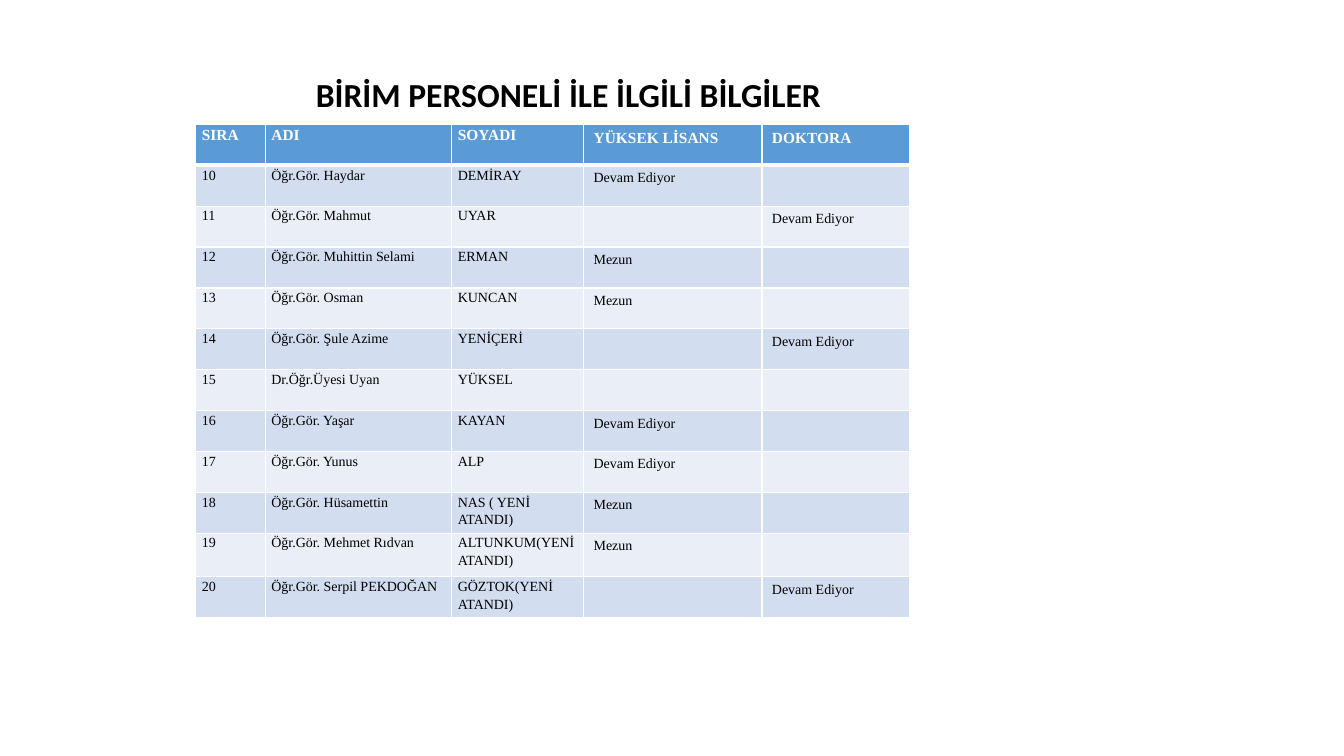
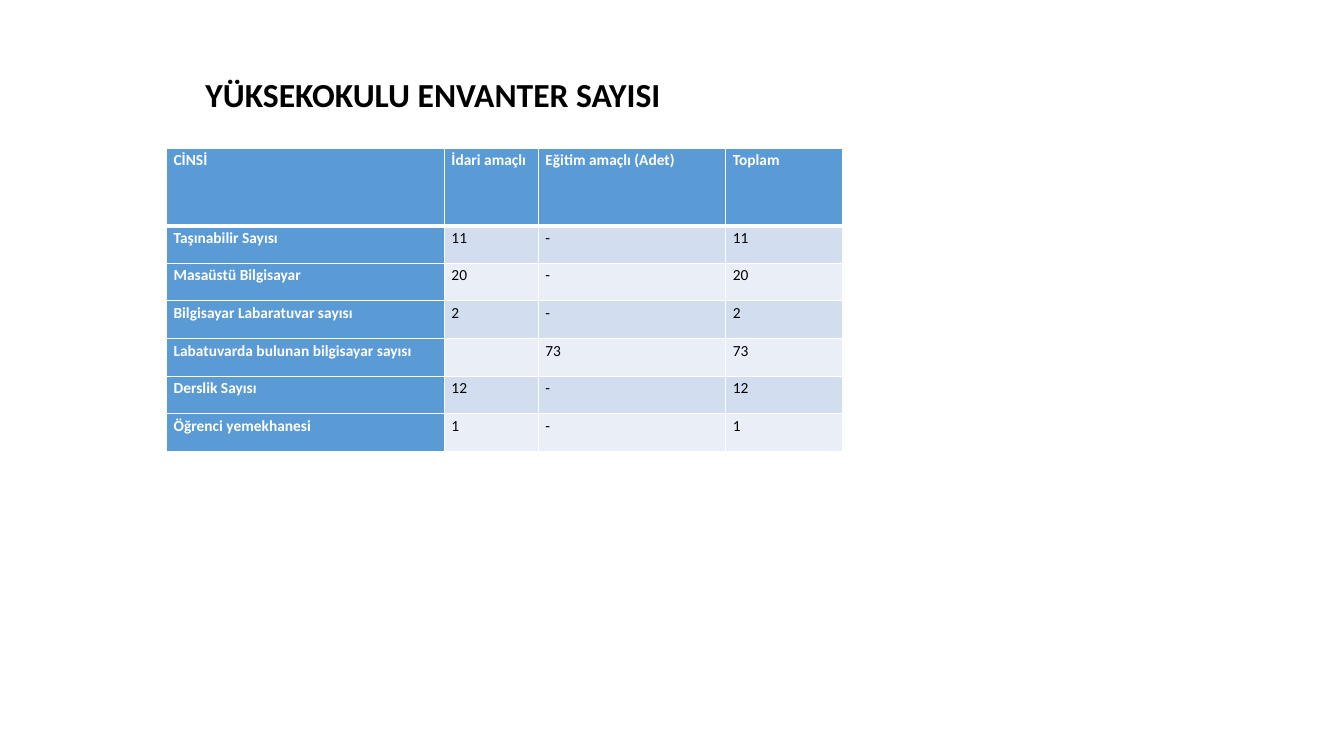
import pptx
import pptx.util
import pptx.dml.color
import pptx.enum.text
import pptx.oxml
import pptx.oxml.ns
from dataclasses import dataclass

Pt = pptx.util.Pt
RGB = pptx.dml.color.RGBColor.from_string
ALIGN = pptx.enum.text.PP_ALIGN


@dataclass(frozen=True)
class Theme:
    accent: str = "5B9BD5"
    bands: tuple = ("D2DEEF", "EAEFF7")
    white: str = "FFFFFF"
    black: str = "000000"
    sans: str = "Calibri"
    serif: str = "Times New Roman"
    title_size: float = 24
    head_size: float = 11
    rule: float = 1
    head_rule: float = 3
    spacing: float = 1.15


THEME = Theme()
ONGOING = "Devam Ediyor"
GRADUATE = "Mezun"

STAFF = [
    ("SIRA", "ADI", "SOYADI", "YÜKSEK LİSANS", "DOKTORA"),
    ("10", "Öğr.Gör. Haydar", "DEMİRAY", ONGOING, ""),
    ("11", "Öğr.Gör. Mahmut", "UYAR", "", ONGOING),
    ("12", "Öğr.Gör. Muhittin Selami", "ERMAN", GRADUATE, ""),
    ("13", "Öğr.Gör. Osman", "KUNCAN", GRADUATE, ""),
    ("14", "Öğr.Gör. Şule Azime", "YENİÇERİ", "", ONGOING),
    ("15", "Dr.Öğr.Üyesi Uyan", "YÜKSEL", "", ""),
    ("16", "Öğr.Gör. Yaşar", "KAYAN", ONGOING, ""),
    ("17", "Öğr.Gör. Yunus", "ALP", ONGOING, ""),
    ("18", "Öğr.Gör. Hüsamettin", "NAS ( YENİ ATANDI)", GRADUATE, ""),
    ("19", "Öğr.Gör. Mehmet Rıdvan", "ALTUNKUM(YENİATANDI)", GRADUATE, ""),
    ("20", "Öğr.Gör. Serpil PEKDOĞAN", "GÖZTOK(YENİ ATANDI)", "", ONGOING),
]

INVENTORY = [
    ("CİNSİ", "İdari amaçlı", "Eğitim amaçlı (Adet)", "Toplam"),
    ("Taşınabilir Sayısı", "11", "-", "11"),
    ("Masaüstü Bilgisayar", "20", "-", "20"),
    ("Bilgisayar Labaratuvar sayısı", "2", "-", "2"),
    ("Labatuvarda bulunan bilgisayar sayısı", "", "73", "73"),
    ("Derslik Sayısı", "12", "-", "12"),
    ("Öğrenci yemekhanesi", "1", "-", "1"),
]

SLIDES = [
    dict(title="BİRİM PERSONELİ İLE İLGİLİ BİLGİLER", align=ALIGN.CENTER,
         rows=STAFF, left=139.7, top=88.9,
         widths=[49.7, 133.2, 94.3, 127.4, 105.8],
         heights=[29.2] * 10 + [31.2, 29.2],
         font=THEME.serif, body_size=10, inset=4.5, tight_cols=3,
         first_col=False),
    dict(title="YÜKSEKOKULU ENVANTER SAYISI", align=ALIGN.LEFT,
         rows=INVENTORY, left=119, top=105.8,
         widths=[198.5, 67.1, 133.9, 83.5],
         heights=[55.4] + [26.9] * 6,
         font=THEME.sans, body_size=11, inset=5, tight_cols=4,
         first_col=True),
]


def add_run(p, text, font, size, color, bold):
    r = p.add_run()
    r.text = text
    r.font.name = font
    r.font.size = Pt(size)
    r.font.bold = bold
    r.font.color.rgb = RGB(color)


def add_title(s, text, align):
    tf = s.shapes.add_textbox(Pt(139.7), Pt(49), Pt(532.8), Pt(36)).text_frame
    tf.word_wrap = True
    p = tf.paragraphs[0]
    p.alignment = align
    add_run(p, text, THEME.sans, THEME.title_size, THEME.black, True)


def set_borders(cell, bottom):
    tc_pr = cell._tc.get_or_add_tcPr()
    sides = {"L": THEME.rule, "R": THEME.rule, "T": THEME.rule, "B": bottom}
    for i, (side, width) in enumerate(sides.items()):
        tc_pr.insert(i, pptx.oxml.parse_xml(
            f'<a:ln{side} {pptx.oxml.ns.nsdecls("a")} w="{Pt(width)}">'
            f'<a:solidFill><a:srgbClr val="{THEME.white}"/></a:solidFill>'
            f'</a:ln{side}>'))


def fill_cell(cell, text, row, col, item):
    header = row == 0
    strong = header or (item["first_col"] and col == 0)
    cell.fill.solid()
    cell.fill.fore_color.rgb = RGB(
        THEME.accent if strong else THEME.bands[(row - 1) % 2])
    set_borders(cell, THEME.head_rule if header else THEME.rule)
    p = cell.text_frame.paragraphs[0]
    if col < item["tight_cols"]:
        cell.margin_left = cell.margin_right = Pt(item["inset"])
        cell.margin_top = cell.margin_bottom = Pt(0)
        p.line_spacing = THEME.spacing
    if text:
        add_run(p, text, item["font"],
                THEME.head_size if header else item["body_size"],
                THEME.white if strong else THEME.black, strong)


def add_grid(s, item):
    rows, widths, heights = item["rows"], item["widths"], item["heights"]
    table = s.shapes.add_table(
        len(rows), len(widths), Pt(item["left"]), Pt(item["top"]),
        Pt(sum(widths)), Pt(sum(heights))).table
    table.horz_banding = False
    table.first_col = item["first_col"]
    for column, width in zip(table.columns, widths):
        column.width = Pt(width)
    for i, (values, height) in enumerate(zip(rows, heights)):
        table.rows[i].height = Pt(height)
        for j, text in enumerate(values):
            fill_cell(table.cell(i, j), text, i, j, item)


def main():
    prs = pptx.Presentation()
    prs.slide_width, prs.slide_height = Pt(960), Pt(540)
    for item in SLIDES:
        s = prs.slides.add_slide(prs.slide_layouts[6])
        add_title(s, item["title"], item["align"])
        add_grid(s, item)
    prs.save("out.pptx")


if __name__ == "__main__":
    main()
